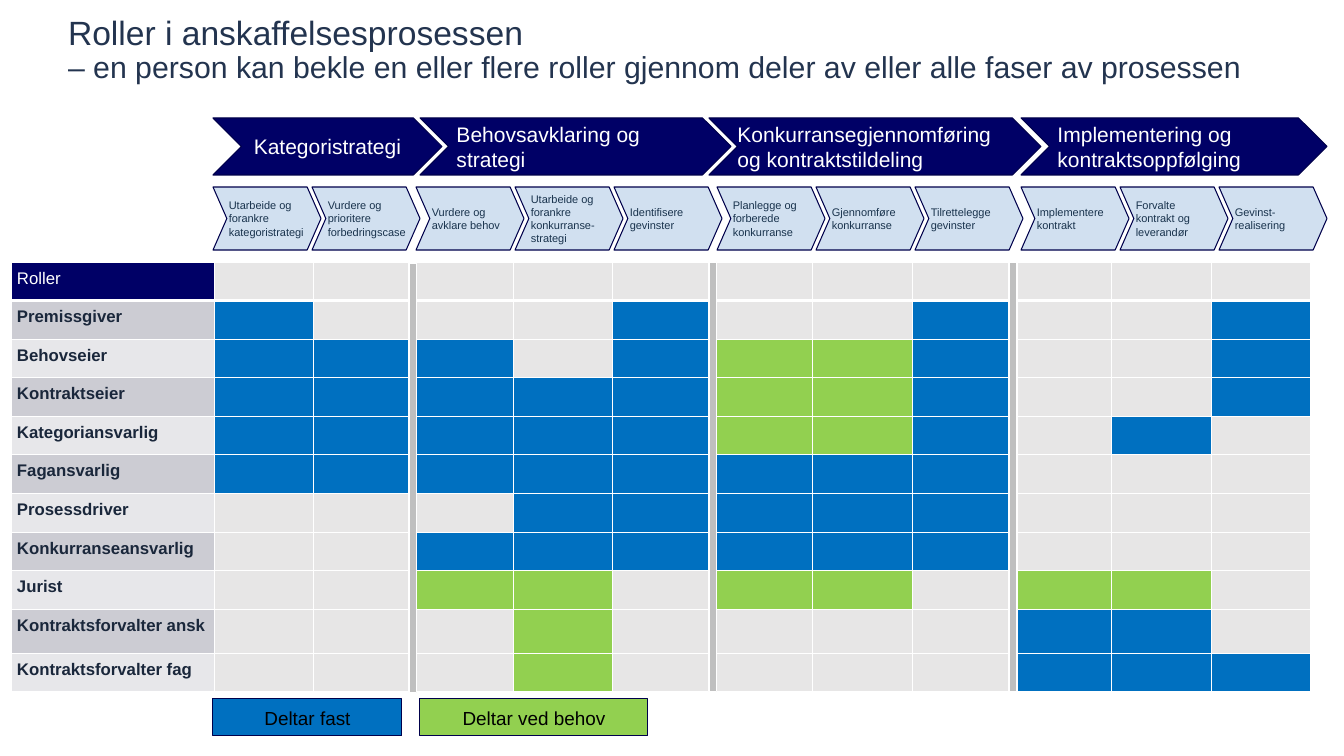
"""Build the slide showing which roles take part in each procurement phase."""
from lxml import etree
from pptx import Presentation
from pptx import util as u
from pptx.dml.color import RGBColor
from pptx.enum import shapes, text
from pptx.oxml.ns import qn

SCALE = 12095
FONT = "Arial"
NAVY, EDGE, WHITE = "000066", "00004B", "FFFFFF"
FILLS = {"F": "0070C0", "B": "92D050", ".": "E7E6E6"}
BANDS = ["CCCCD3", "E7E7EA"]

TITLE = [
    ("Roller i anskaffelsesprosessen", 32),
    ("– en person kan bekle en eller flere roller gjennom deler av eller alle faser av prosessen", 28.8),
]
PHASES = [
    ("Kategoristrategi", 213, 229, 8, text.PP_ALIGN.CENTER),
    ("Behovsavklaring og strategi", 420, 311, 8, text.PP_ALIGN.LEFT),
    ("Konkurransegjennomføring og kontraktstildeling", 709, 332, 0, text.PP_ALIGN.LEFT),
    ("Implementering og kontraktsoppfølging", 1021, 306, 8, text.PP_ALIGN.LEFT),
]
STEPS = [
    (213, ["Utarbeide og forankre kategoristrategi", "Vurdere og prioritere forbedringscase"]),
    (416, ["Vurdere og avklare behov", "Utarbeide og forankre konkurranse-strategi", "Identifisere gevinster"]),
    (717, ["Planlegge og forberede konkurranse", "Gjennomføre konkurranse", "Tilrettelegge gevinster"]),
    (1021, ["Implementere kontrakt", "Forvalte kontrakt og leverandør", "Gevinst-realisering"]),
]
ROLES = [
    ("Roller", "..........."),
    ("Premissgiver", "F...F..F..F"),
    ("Behovseier", "FFF.FBBF..F"),
    ("Kontraktseier", "FFFFFBBF..F"),
    ("Kategoriansvarlig", "FFFFFBBF.F."),
    ("Fagansvarlig", "FFFFFFFF..."),
    ("Prosessdriver", "...FFFFF..."),
    ("Konkurranseansvarlig", "..FFFFFF..."),
    ("Jurist", "..BB.BB.BB."),
    ("Kontraktsforvalter ansk", "...B....FF."),
    ("Kontraktsforvalter fag", "...B....FFF"),
]
TALL_ROW = "Kontraktsforvalter ansk"
DIVIDERS = [(409, 263), (709, 262), (1009, 262)]
LEGEND = [("Deltar fast", "F", 213, 189), ("Deltar ved behov", "B", 420, 228)]
TABLE = (11, 262, 1300, 430)
ROLE_WIDTH, TALL_HEIGHT, STEP_PITCH = 203, 44, 99


def px(value):
    return u.Emu(round(value * SCALE))


def color(value):
    return RGBColor.from_string(value)


def style(para, size, ink, bold=False):
    para.font.name, para.font.size, para.font.bold = FONT, u.Pt(size), bold
    para.font.color.rgb = color(ink)


def add_block(page, kind, place, fill, line):
    block = page.shapes.add_shape(kind, *map(px, place))
    block.shadow.inherit = False
    block.fill.solid()
    block.fill.fore_color.rgb = color(fill)
    block.line.color.rgb = color(line)
    block.line.width = u.Pt(1)
    return block


def write(block, words, size, ink, align, left=8, right=8):
    frame = block.text_frame
    frame.word_wrap = True
    frame.vertical_anchor = text.MSO_ANCHOR.MIDDLE
    frame.margin_left, frame.margin_right = px(left), px(right)
    para = frame.paragraphs[0]
    para.text, para.alignment = words, align
    style(para, size, ink)


def add_title(page):
    box = page.shapes.add_textbox(*map(px, (68, 35, 1249, 50)))
    frame = box.text_frame
    frame.word_wrap = True
    frame.vertical_anchor = text.MSO_ANCHOR.BOTTOM
    frame.margin_left = frame.margin_right = frame.margin_top = frame.margin_bottom = 0
    para = frame.paragraphs[0]
    para.line_spacing = 0.9
    for index, (words, size) in enumerate(TITLE):
        if index:
            para.add_line_break()
        span = para.add_run()
        span.text = words
        span.font.name, span.font.size = FONT, u.Pt(size)
        span.font.color.rgb = color("23344F")


def paint_cell(cell, fill, bottom):
    props = cell._tc.get_or_add_tcPr()
    for side in ("lnL", "lnR", "lnT", "lnB"):
        width = bottom if side == "lnB" else 1
        edge = etree.SubElement(props, qn(f"a:{side}"), w=str(u.Pt(width)))
        solid = etree.SubElement(edge, qn("a:solidFill"))
        etree.SubElement(solid, qn("a:srgbClr"), val=WHITE)
    cell.fill.solid()
    cell.fill.fore_color.rgb = color(fill)


def add_matrix(page):
    steps = len(ROLES[0][1])
    grid = page.shapes.add_table(len(ROLES), steps + 1, *map(px, TABLE)).table
    grid.first_row = grid.horz_banding = False
    for index, column in enumerate(grid.columns):
        column.width = px((TABLE[2] - ROLE_WIDTH) / steps if index else ROLE_WIDTH)
    height = (TABLE[3] - TALL_HEIGHT) / (len(ROLES) - 1)
    for row, (role, marks) in enumerate(ROLES):
        grid.rows[row].height = px(TALL_HEIGHT if role == TALL_ROW else height)
        bottom = 1 if row else 3
        cell = grid.cell(row, 0)
        cell.margin_left, cell.margin_right = px(6), 0
        cell.margin_top = cell.margin_bottom = px(7)
        cell.text = role
        style(cell.text_frame.paragraphs[0], 16, "1A273B" if row else WHITE, row > 0)
        paint_cell(cell, BANDS[(row - 1) % 2] if row else NAVY, bottom)
        for column, mark in enumerate(marks, 1):
            paint_cell(grid.cell(row, column), FILLS[mark], bottom)


def main():
    deck = Presentation()
    deck.slide_width, deck.slide_height = px(1344), px(756)
    page = deck.slides.add_slide(deck.slide_layouts[6])
    kinds, align = shapes.MSO_SHAPE, text.PP_ALIGN
    add_title(page)
    add_matrix(page)
    for left, top in DIVIDERS:
        add_block(page, kinds.RECTANGLE, (left, top, 8, TABLE[3]), "BFBFBF", WHITE)
    for words, mark, left, width in LEGEND:
        box = add_block(page, kinds.RECTANGLE, (left, 699, width, 37), FILLS[mark], EDGE)
        write(box, words, 18, "000000", align.CENTER)
    for words, left, width, inset, side in PHASES:
        arrow = add_block(page, kinds.CHEVRON, (left, 118, width, 57), NAVY, EDGE)
        write(arrow, words, 20, WHITE, side, inset, inset)
    for start, names in STEPS:
        for index, words in enumerate(names):
            place = (start + index * STEP_PITCH, 187, 108, 63)
            arrow = add_block(page, kinds.CHEVRON, place, "D1E0F0", EDGE)
            arrow.adjustments[0] = 0.22
            write(arrow, words, 10.5, "19334D", align.LEFT, 2, 0)
    deck.save("out.pptx")


if __name__ == "__main__":
    main()
